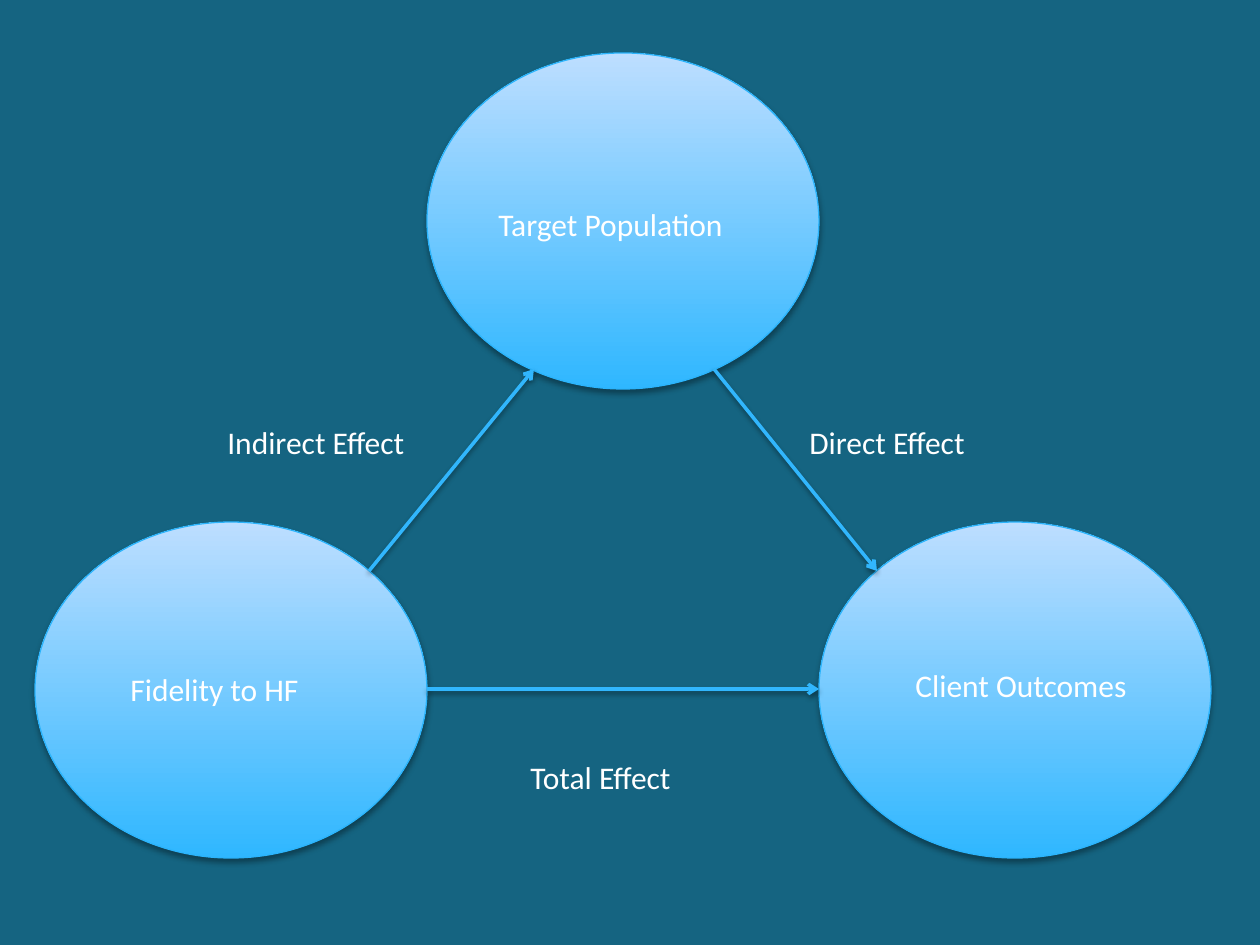
from lxml import etree
from pptx import Presentation, util as u
from pptx.dml.color import RGBColor
from pptx.enum import shapes, text
from pptx.oxml import ns

PX = 914400 / 126
BACKGROUND = RGBColor(0x15, 0x64, 0x81)
DEEP_BLUE = RGBColor(0x2F, 0xB7, 0xFF)
PALE_BLUE = RGBColor(0xBD, 0xDE, 0xFF)
OUTLINE = RGBColor(0x2B, 0xB4, 0xFC)
ARROW = RGBColor(0x31, 0xB6, 0xFD)
WHITE = RGBColor(0xFF, 0xFF, 0xFF)
LABEL_FONT = {"name": "Calibri", "size": u.Pt(18)}
LABEL_FRAME = {"word_wrap": True, "auto_size": text.MSO_AUTO_SIZE.SHAPE_TO_FIT_TEXT}


def emu(*lengths):
    return [u.Emu(round(length * PX)) for length in lengths]


def add_shadow(properties, distance, opacity):
    effects = properties.find(ns.qn("a:effectLst"))
    if effects is None:
        effects = etree.SubElement(properties, ns.qn("a:effectLst"))
    shadow = etree.SubElement(effects, ns.qn("a:outerShdw"), blurRad=str(u.Pt(3.1)),
                              dist=str(u.Pt(distance)), dir="5400000", rotWithShape="0")
    black = etree.SubElement(shadow, ns.qn("a:srgbClr"), val="000000")
    etree.SubElement(black, ns.qn("a:alpha"), val=str(opacity * 1000))


deck = Presentation()
deck.slide_width, deck.slide_height = emu(1260, 945)
slide = deck.slides.add_slide(deck.slide_layouts[6])
slide.background.fill.solid()
slide.background.fill.fore_color.rgb = BACKGROUND

node_width, node_height = 392, 336
for column, top in enumerate((522, 53, 522)):
    node = slide.shapes.add_shape(
        shapes.MSO_SHAPE.OVAL, *emu(35 + column * node_width, top, node_width, node_height))
    node.fill.gradient()
    node.fill.gradient_angle = 90
    for stop, position, color in zip(node.fill.gradient_stops, (0, 1), (DEEP_BLUE, PALE_BLUE)):
        stop.position = position
        stop.color.rgb = color
    node.line.color.rgb = OUTLINE
    node.line.width = u.Pt(0.75)
    node.shadow.inherit = False
    add_shadow(node._element.spPr, 1.8, 35)

for ends in ((369, 571, 534, 369), (714, 369, 877, 571), (427, 689, 819, 689)):
    effect = slide.shapes.add_connector(shapes.MSO_CONNECTOR.STRAIGHT, *emu(*ends))
    effect.line.color.rgb = ARROW
    effect.line.width = u.Pt(2)
    etree.SubElement(effect.line._get_or_add_ln(), ns.qn("a:tailEnd"), type="arrow")
    add_shadow(effect._element.spPr, 1.6, 38)

for wording, left, top, width in (
    ("Fidelity to HF", 118, 664, 224),
    ("Client Outcomes", 903, 660, 280),
    ("Target Population", 486, 199, 275),
    ("Total Effect", 518, 752, 212),
    ("Indirect Effect", 215, 417, 212),
    ("Direct Effect", 797, 417, 212),
):
    label = slide.shapes.add_textbox(*emu(left, top, width, 51)).text_frame
    for attribute, value in LABEL_FRAME.items():
        setattr(label, attribute, value)
    run = label.paragraphs[0].add_run()
    run.text = wording
    for attribute, value in LABEL_FONT.items():
        setattr(run.font, attribute, value)
    run.font.color.rgb = WHITE

deck.save("out.pptx")
